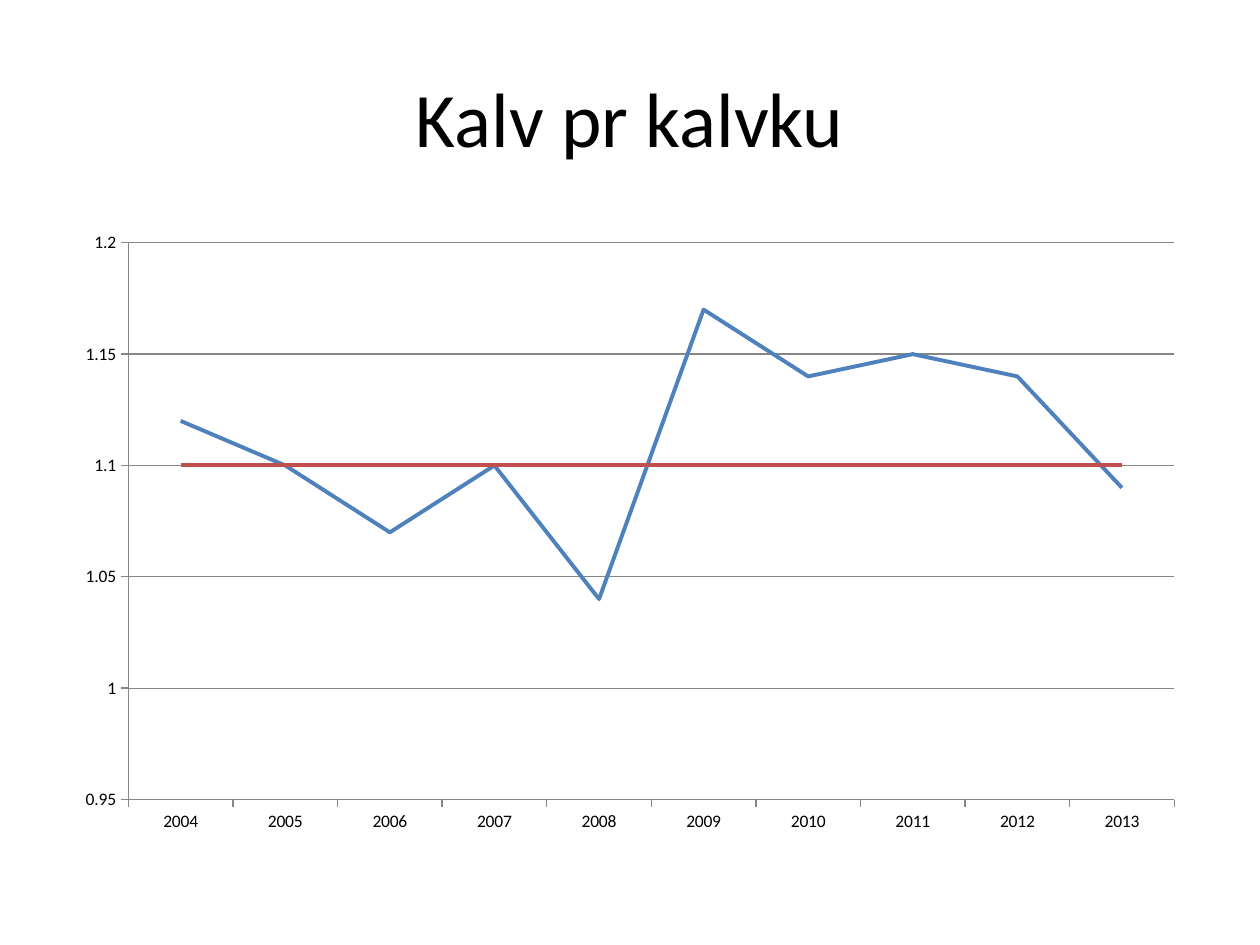
import dataclasses

import pptx
import pptx.chart.data
import pptx.dml.color
import pptx.enum.chart
import pptx.enum.text
import pptx.util

Inches = pptx.util.Inches
Pt = pptx.util.Pt
Color = pptx.dml.color.RGBColor.from_string


@dataclasses.dataclass(frozen=True)
class Theme:
    font: str = "Calibri"
    ink: str = "000000"
    grid: str = "868686"
    lines: tuple = ("4F81BD", "C0504D")
    head: float = 44
    label: float = 10
    stroke: float = 2.25
    hair: float = 0.75


THEME = Theme()
YEARS = [str(year) for year in range(2004, 2014)]
CALVES = [1.12, 1.1, 1.07, 1.1, 1.04, 1.17, 1.14, 1.15, 1.14, 1.09]
GOAL = [1.1] * len(YEARS)


def style(font, size, color):
    font.name = THEME.font
    font.size = Pt(size)
    font.color.rgb = Color(color)


def stroke(line, color, width):
    line.color.rgb = Color(color)
    line.width = Pt(width)


def write(frame, text, size, color, align):
    frame.word_wrap = True
    frame.vertical_anchor = pptx.enum.text.MSO_ANCHOR.MIDDLE
    para = frame.paragraphs[0]
    para.alignment = align
    run = para.add_run()
    run.text = text
    style(run.font, size, color)


def add_title(slide, box, text):
    title = slide.shapes.title
    title.left, title.top, title.width, title.height = box
    write(title.text_frame, text, size=THEME.head, color=THEME.ink,
          align=pptx.enum.text.PP_ALIGN.CENTER)


def add_trend(slide, box):
    data = pptx.chart.data.CategoryChartData()
    data.categories = YEARS
    data.add_series("Series 1", CALVES)
    data.add_series("Series 2", GOAL)
    kind = pptx.enum.chart.XL_CHART_TYPE.LINE
    chart = slide.shapes.add_chart(kind, *box, data).chart
    chart.has_legend = False
    chart.has_title = False
    style(chart.font, THEME.label, THEME.ink)

    plot = chart.plots[0]
    plot.vary_by_categories = False
    for series, color in zip(plot.series, THEME.lines):
        series.smooth = False
        series.marker.style = pptx.enum.chart.XL_MARKER_STYLE.NONE
        stroke(series.format.line, color, THEME.stroke)

    for axis in (chart.category_axis, chart.value_axis):
        axis.major_tick_mark = pptx.enum.chart.XL_TICK_MARK.OUTSIDE
        axis.minor_tick_mark = pptx.enum.chart.XL_TICK_MARK.NONE
        stroke(axis.format.line, THEME.grid, THEME.hair)

    scale = chart.value_axis
    scale.minimum_scale = 0.95
    scale.maximum_scale = 1.2
    scale.major_unit = 0.05
    scale.tick_labels.number_format = "General"
    scale.tick_labels.number_format_is_linked = False
    scale.has_major_gridlines = True
    stroke(scale.major_gridlines.format.line, THEME.grid, THEME.hair)


def main():
    deck = pptx.Presentation()
    deck.slide_width = Inches(10)
    deck.slide_height = Inches(7.5)
    slide = deck.slides.add_slide(deck.slide_layouts.get_by_name("Title Only"))
    left, width = Inches(0.5), Inches(9)
    add_title(slide, (left, Inches(0.3), width, Inches(1.25)), "Kalv pr kalvku")
    add_trend(slide, (left, Inches(1.75), width, Inches(4.95)))
    deck.save("out.pptx")


if __name__ == "__main__":
    main()
